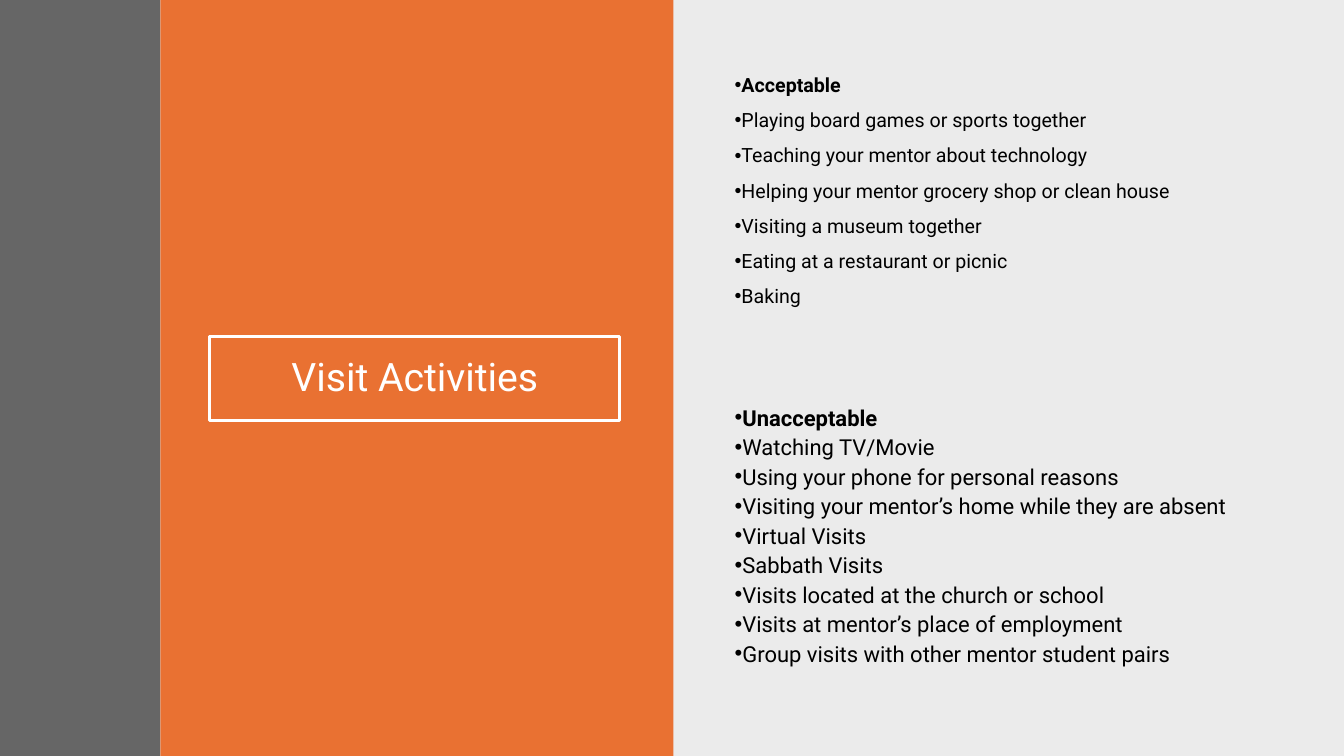
import pptx
import pptx.util
import pptx.dml.color
import pptx.enum.shapes
import pptx.enum.text
import pptx.oxml.ns
from lxml import etree

Pt = pptx.util.Pt
RGB = pptx.dml.color.RGBColor
BLACK = RGB(0, 0, 0)
WHITE = RGB(255, 255, 255)
ORANGE = RGB(0xE9, 0x71, 0x32)
GRAY = RGB(0x40, 0x40, 0x40)
FONT = "Roboto"
WIDE, HIGH = 960, 540

GOOD = [
    "Acceptable",
    "Playing board games or sports together",
    "Teaching your mentor about technology",
    "Helping your mentor grocery shop or clean house",
    "Visiting a museum together",
    "Eating at a restaurant or picnic",
    "Baking",
]
BAD = [
    "Unacceptable",
    "Watching TV/Movie",
    "Using your phone for personal reasons",
    "Visiting your mentor’s home while they are absent",
    "Virtual Visits",
    "Sabbath Visits",
    "Visits located at the church or school",
    "Visits at mentor’s place of employment",
    "Group visits with other mentor student pairs",
]


def add_tag(parent, name, **attrs):
    return etree.SubElement(parent, pptx.oxml.ns.qn(name), **attrs)


def style(par, size, color, bold=False):
    for run in par.runs:
        run.font.name = FONT
        run.font.size = Pt(size)
        run.font.bold = bold
        run.font.color.rgb = color


def add_panel(slide, box, color, alpha=100):
    rect = pptx.enum.shapes.MSO_SHAPE.RECTANGLE
    panel = slide.shapes.add_shape(rect, *map(Pt, box))
    panel.shadow.inherit = False
    panel.line.fill.background()
    panel.fill.solid()
    panel.fill.fore_color.rgb = color
    if alpha < 100:
        tone = panel.fill._xPr.find(".//" + pptx.oxml.ns.qn("a:srgbClr"))
        add_tag(tone, "a:alpha", val=str(alpha * 1000))


def add_title(slide, box, text):
    title = slide.shapes.add_textbox(*map(Pt, box))
    title.line.color.rgb = WHITE
    title.line.width = Pt(2)
    frame = title.text_frame
    frame.word_wrap = True
    frame.vertical_anchor = pptx.enum.text.MSO_ANCHOR.MIDDLE
    frame.text = text
    par = frame.paragraphs[0]
    par.alignment = pptx.enum.text.PP_ALIGN.CENTER
    par.line_spacing = 0.9
    style(par, 28, WHITE)


def add_list(slide, box, items, size, lines, before=0, after=0):
    frame = slide.shapes.add_textbox(*map(Pt, box)).text_frame
    frame.word_wrap = True
    frame.text = "\n".join(items)
    for num, par in enumerate(frame.paragraphs):
        props = par._p.get_or_add_pPr()
        props.set("marL", "0")
        props.set("indent", str(-Pt(18)))
        add_tag(props, "a:buFont", typeface="Arial")
        add_tag(props, "a:buChar", char="•")
        par.line_spacing = lines
        par.space_before = Pt(before if num else 0)
        par.space_after = Pt(after)
        style(par, size, BLACK, bold=num == 0)


def add_left(slide, left, width):
    # Orange panel, framed title and dark strip at the edge
    add_panel(slide, (left, 0, width, HIGH), ORANGE)
    add_title(slide, (left + 35.3, 240.5, 293, 59.8), "Visit Activities")
    add_panel(slide, (0, 0, left, HIGH), GRAY, 80)


def add_right(slide, left, width):
    # Two lists of the same size, one above the other
    side, tall = left + 37.7, 200.9
    add_list(slide, (side, 50.4, 398.2, tall), GOOD, 14, 0.9, before=10)
    add_list(slide, (side, 288.7, 398.2, tall), BAD, 15.7, 0.8, after=6)


def main():
    deck = pptx.Presentation()
    deck.slide_width, deck.slide_height = Pt(WIDE), Pt(HIGH)
    slide = deck.slides.add_slide(deck.slide_layouts[6])
    half = WIDE / 2
    # Light shade under the right half
    add_panel(slide, (half, 0, half, HIGH), BLACK, 8)
    add_left(slide, 114.5, 366.5)
    add_right(slide, half, half)
    deck.save("out.pptx")


if __name__ == "__main__":
    main()
